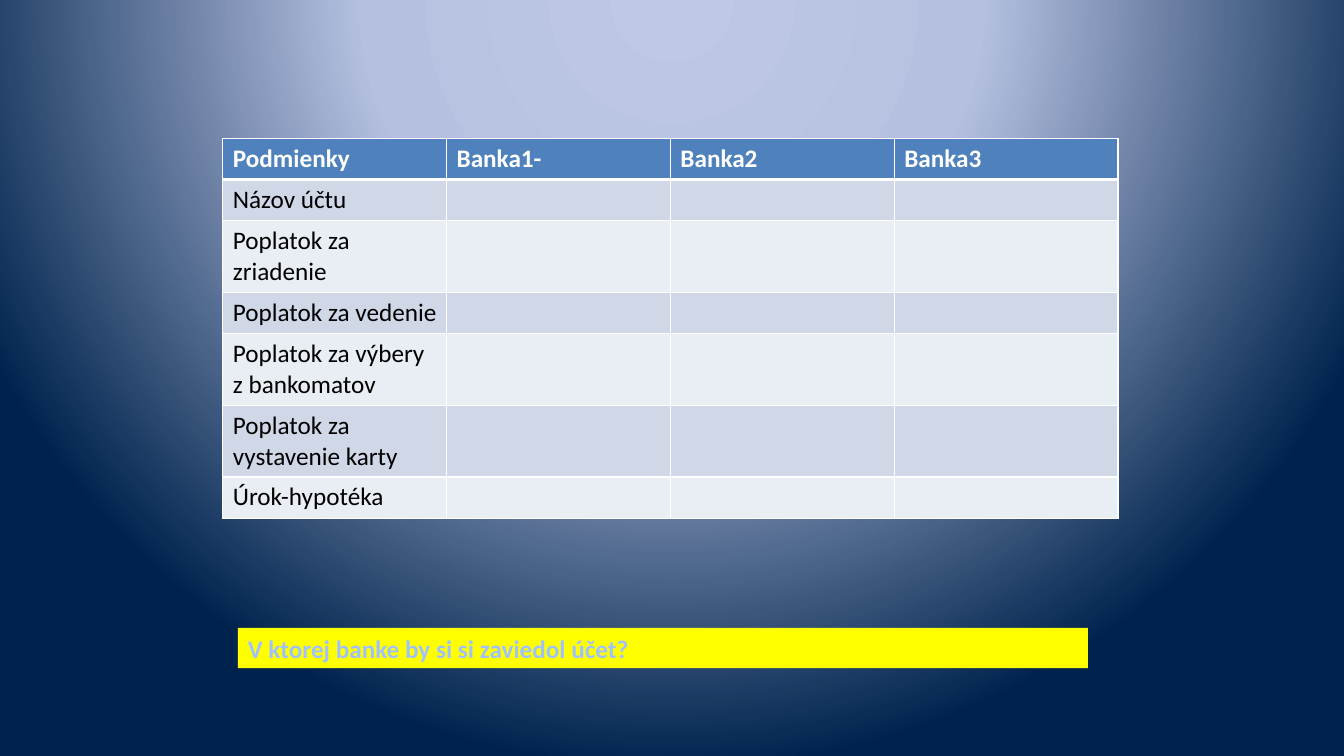
from lxml import etree
from pptx import Presentation
from pptx.dml.color import RGBColor
from pptx.enum.shapes import MSO_SHAPE
from pptx.enum.text import MSO_ANCHOR, PP_ALIGN
from pptx.oxml.ns import qn
from pptx.util import Inches, Pt

RECTANGLE = MSO_SHAPE.RECTANGLE
LEFT = PP_ALIGN.LEFT
MIDDLE = MSO_ANCHOR.MIDDLE

COLORS = {
    "white": "FFFFFF",
    "black": "000000",
    "header": "4F81BD",
    "odd_row": "D0D8E8",
    "even_row": "E9EDF4",
    "yellow": "FFFF00",
    "outline": "467AB8",
    "sky": "BFC9E5",
    "haze": "B5C0E0",
    "navy": "00234D",
    "pale": "BFD3F9",
    "light": "A0C1FF",
    "deep": "003D85",
}
BACKGROUND_STOPS = [(0, "sky"), (40, "haze"), (100, "navy")]
QUESTION_STOPS = [(0, "pale"), (9, "light"), (50, "deep"), (79, "light"), (100, "pale")]
BANKS = ["Podmienky", "Banka1-", "Banka2", "Banka3"]
CONDITIONS = [
    "Názov účtu",
    "Poplatok za zriadenie",
    "Poplatok za vedenie",
    "Poplatok za výbery z bankomatov",
    "Poplatok za vystavenie karty",
    "Úrok-hypotéka",
]
QUESTION = "V ktorej banke by si si zaviedol účet?"
COLUMN_WIDTH = 2.22
ROW_HEIGHT = 0.41


def rgb(name):
    return RGBColor.from_string(COLORS[name])


def add_element(parent, tag, **values):
    attributes = {key: str(value) for key, value in values.items()}
    return etree.SubElement(parent, qn(tag), attributes)


def add_solid(parent, color):
    add_element(add_element(parent, "a:solidFill"), "a:srgbClr", val=COLORS[color])


def add_gradient(parent, stops):
    gradient = add_element(parent, "a:gradFill", rotWithShape=1)
    stop_list = add_element(gradient, "a:gsLst")
    for position, color in stops:
        stop = add_element(stop_list, "a:gs", pos=position * 1000)
        add_element(stop, "a:srgbClr", val=COLORS[color])
    return gradient


def paint_background(page):
    page.background.fill.solid()
    properties = page.element.cSld.find(qn("p:bg")).find(qn("p:bgPr"))
    properties.remove(properties.find(qn("a:solidFill")))
    gradient = add_gradient(properties, BACKGROUND_STOPS)
    properties.insert(0, gradient)
    circle = add_element(gradient, "a:path", path="circle")
    add_element(circle, "a:fillToRect", l=50000, t=-80000, r=50000, b=180000)


def write_text(frame, text, **formats):
    para = frame.paragraphs[0]
    para.alignment = LEFT
    span = para.add_run()
    span.text = text
    for name, value in {"name": "Calibri", "size": Pt(18), **formats}.items():
        setattr(span.font, name, value)
    return span


def add_borders(cell, top, bottom):
    properties = cell._tc.get_or_add_tcPr()
    for side, width in {"L": 1, "R": 1, "T": top, "B": bottom}.items():
        line = add_element(properties, f"a:ln{side}", w=Pt(width))
        add_solid(line, "white")


def fill_cell(cell, text, row):
    add_borders(cell, 3 if row == 1 else 1, 3 if row == 0 else 1)
    band = "header" if row == 0 else "odd_row" if row % 2 else "even_row"
    cell.fill.solid()
    cell.fill.fore_color.rgb = rgb(band)
    span = write_text(cell.text_frame, text, bold=row == 0)
    span.font.color.rgb = rgb("white" if row == 0 else "black")


def add_bank_table(page):
    rows = [BANKS] + [[condition, "", "", ""] for condition in CONDITIONS]
    table = page.shapes.add_table(
        len(rows), len(BANKS), Inches(2.21), Inches(1.37),
        Inches(COLUMN_WIDTH * len(BANKS)), Inches(ROW_HEIGHT * len(rows)),
    ).table
    for row, texts in enumerate(rows):
        for column, text in enumerate(texts):
            fill_cell(table.cell(row, column), text, row)


def add_question(page):
    box = page.shapes.add_shape(
        RECTANGLE, Inches(2.36), Inches(6.23), Inches(8.43), Inches(0.4)
    )
    box.shadow.inherit = False
    box.fill.solid()
    box.fill.fore_color.rgb = rgb("yellow")
    box.line.fill.background()
    box.text_frame.word_wrap = True
    box.text_frame.vertical_anchor = MIDDLE
    span = write_text(box.text_frame, QUESTION, bold=True)
    properties = span.font._element
    outline = add_element(properties, "a:ln", w=Pt(0.83))
    add_solid(outline, "outline")
    gradient = add_gradient(properties, QUESTION_STOPS)
    add_element(gradient, "a:lin", ang=5400000, scaled=0)
    properties.insert(0, outline)
    properties.insert(1, gradient)


def main():
    deck = Presentation()
    deck.slide_width = Inches(13.33)
    deck.slide_height = Inches(7.5)
    page = deck.slides.add_slide(deck.slide_layouts[6])
    paint_background(page)
    add_bank_table(page)
    add_question(page)
    deck.save("out.pptx")


if __name__ == "__main__":
    main()
